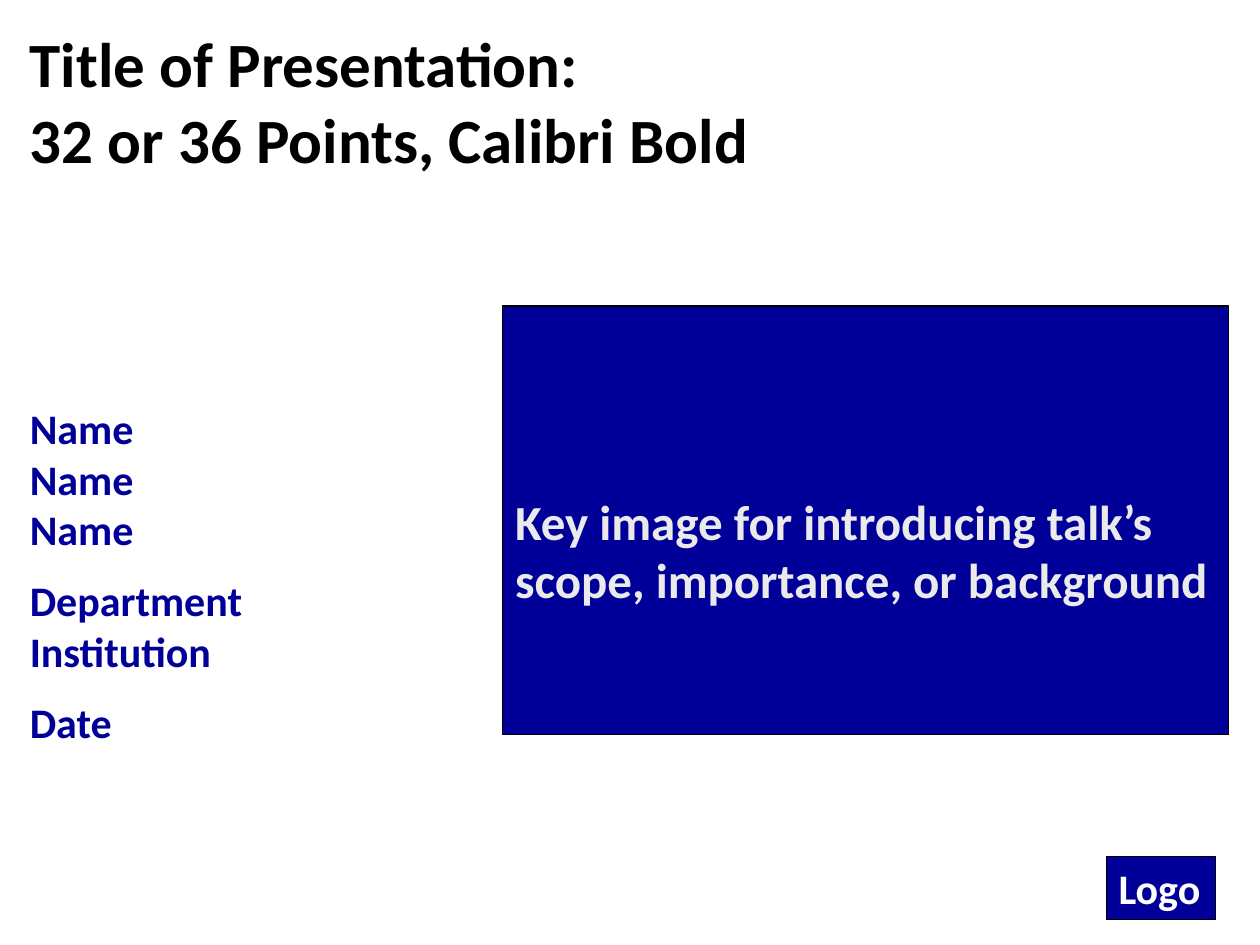
from pptx import Presentation
from pptx import util as u
from pptx.dml.color import RGBColor
from pptx.enum import shapes, text

NAVY = RGBColor(0x00, 0x00, 0x99)
BLACK = RGBColor(0x00, 0x00, 0x00)
WHITE = RGBColor(0xFF, 0xFF, 0xFF)
PALE = RGBColor(0xEA, 0xEA, 0xEA)
FONT = "Calibri"
WIDTH, HEIGHT = u.Inches(10), u.Inches(7.5)
COLUMNS, ROWS = 60, 45
MARGIN = 1


def grid(left, top, columns, rows):
    column, row = WIDTH / COLUMNS, HEIGHT / ROWS
    return (round(left * column), round(top * row),
            round(columns * column), round(rows * row))


def write(shape, groups, size, color, insets=(0.07, 0.03), anchor=text.MSO_ANCHOR.TOP,
          gap=0, wrap=True, drop=0):
    frame = shape.text_frame
    frame.auto_size = text.MSO_AUTO_SIZE.NONE
    frame.word_wrap = wrap
    frame.vertical_anchor = anchor
    frame.margin_left = frame.margin_right = u.Inches(insets[0])
    frame.margin_top = u.Inches(insets[1] + drop)
    frame.margin_bottom = u.Inches(insets[1])
    frame.text = "\n".join(line for group in groups for line in group)
    starts = [index == 0 for group in groups for index in range(len(group))]
    for number, (paragraph, starts_group) in enumerate(zip(frame.paragraphs, starts)):
        paragraph.alignment = text.PP_ALIGN.LEFT
        paragraph.space_before = u.Pt(gap if starts_group and number else 0)
        font = paragraph.runs[0].font
        font.name, font.size, font.bold = FONT, u.Pt(size), True
        font.color.rgb = color


def add_title(slide, lines):
    title = slide.shapes.title
    title.left, title.top, title.width, title.height = grid(MARGIN, MARGIN, 54.84, 7.56)
    write(title, [lines], 36, BLACK)


def add_text(slide, place, groups, **style):
    box = slide.shapes.add_textbox(*grid(*place))
    write(box, groups, **style)


def add_panel(slide, place, label, **style):
    panel = slide.shapes.add_shape(shapes.MSO_SHAPE.RECTANGLE, *grid(*place))
    panel.shadow.inherit = False
    panel.fill.solid()
    panel.fill.fore_color.rgb = NAVY
    panel.line.color.rgb = BLACK
    panel.line.width = u.Pt(0.75)
    write(panel, [[label]], insets=(0.1, 0.05), **style)


def main():
    presentation = Presentation()
    presentation.slide_width, presentation.slide_height = WIDTH, HEIGHT
    slide = presentation.slides.add_slide(presentation.slide_layouts[5])
    add_title(slide, ["Title of Presentation:", "32 or 36 Points, Calibri Bold"])
    add_text(slide, (MARGIN, 19, 17.5, 17.28),
             [["Name"] * 3, ["Department", "Institution"], ["Date"]],
             size=24, color=NAVY, gap=12)
    add_panel(slide, (23.94, 14.58, 34.56, 20.4),
              "Key image for introducing talk’s scope, importance, or background",
              size=28, color=PALE, anchor=text.MSO_ANCHOR.MIDDLE, drop=0.47)
    add_panel(slide, (52.68, 40.8, 5.22, 3), "Logo", size=24, color=WHITE, wrap=False)
    presentation.save("out.pptx")


if __name__ == "__main__":
    main()
